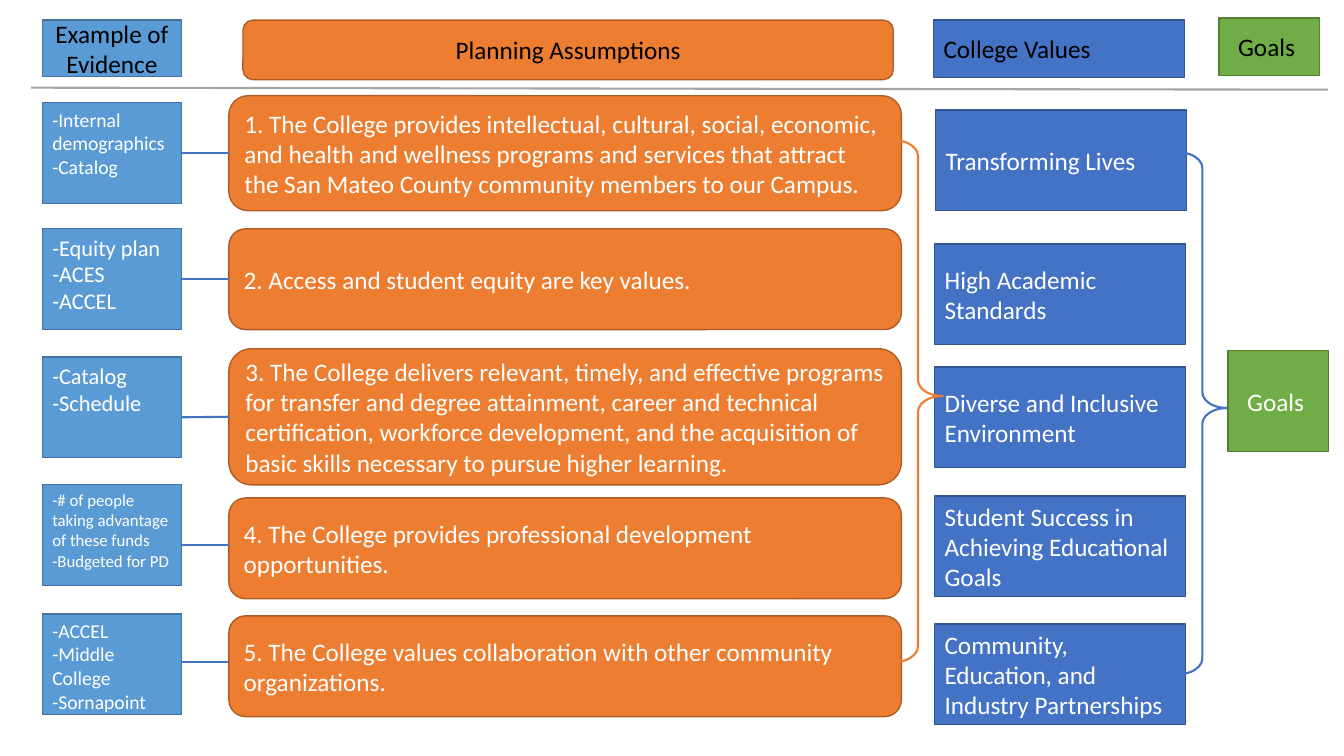
from dataclasses import dataclass

from lxml import etree
from pptx import Presentation
from pptx.dml.color import RGBColor
from pptx.enum.shapes import MSO_CONNECTOR, MSO_SHAPE
from pptx.enum.text import MSO_ANCHOR, PP_ALIGN
from pptx.oxml.ns import qn
from pptx.shapes.autoshape import Shape
from pptx.shapes.connector import Connector
from pptx.slide import Slide
from pptx.util import Inches, Pt

RECTANGLE = MSO_SHAPE.RECTANGLE
ROUNDED = MSO_SHAPE.ROUNDED_RECTANGLE
BRACE = MSO_SHAPE.RIGHT_BRACE
STRAIGHT = MSO_CONNECTOR.STRAIGHT
LEFT, CENTER = PP_ALIGN.LEFT, PP_ALIGN.CENTER
TOP, MIDDLE = MSO_ANCHOR.TOP, MSO_ANCHOR.MIDDLE
LEFT_SIDE, RIGHT_SIDE = 1, 3

FONT = "Calibri"
WHITE, BLACK, GRAY = "FFFFFF", "000000", "A5A5A5"
BLUE, ORANGE = "4472C4", "ED7D31"


@dataclass(frozen=True)
class Style:
    preset: MSO_SHAPE
    fill: str
    line: str
    align: PP_ALIGN = LEFT
    anchor: MSO_ANCHOR = MIDDLE


@dataclass(frozen=True)
class Card:
    text: str
    left: float
    top: float
    width: float
    height: float = 1
    size: int = 18


@dataclass(frozen=True)
class Row:
    evidence: Card
    assumption: Card
    link_y: float


@dataclass(frozen=True)
class Brace:
    left: float
    top: float
    color: str


EVIDENCE = Style(RECTANGLE, "5B9BD5", "43739E", anchor=TOP)
EVIDENCE_HEADER = Style(RECTANGLE, "5B9BD5", "43739E", align=CENTER)
ASSUMPTION = Style(ROUNDED, ORANGE, "AF5C24")
ASSUMPTION_HEADER = Style(ROUNDED, ORANGE, "AF5C24", align=CENTER)
VALUE = Style(RECTANGLE, BLUE, "325491")
GOAL = Style(RECTANGLE, "70AD47", "538035", align=CENTER)


def evidence(text: str, top: float, size: int) -> Card:
    return Card(text, 0.42, top, 1.38, size=size)


def assumption(text: str, top: float, height: float = 1) -> Card:
    return Card(text, 2.27, top, 6.67, height)


def value(text: str, top: float, left: float = 9.27) -> Card:
    return Card(text, left, top, 2.49)


ROWS = [
    Row(evidence("-Internal demographics\n-Catalog", 1.02, 14),
        assumption("1. The College provides intellectual, cultural, social, economic, "
                   "and health and wellness programs and services that attract the "
                   "San Mateo County community members to our Campus.", 0.95, 1.14), 1.52),
    Row(evidence("-Equity plan\n-ACES\n-ACCEL", 2.27, 16),
        assumption("2. Access and student equity are key values.", 2.27), 2.77),
    Row(evidence("-Catalog\n-Schedule", 3.54, 16),
        assumption("3. The College delivers relevant, timely, and effective programs for "
                   "transfer and degree attainment, career and technical certification, "
                   "workforce development, and the acquisition of basic skills necessary "
                   "to pursue higher learning.", 3.46, 1.35), 4.14),
    Row(evidence("-# of people taking advantage of these funds\n-Budgeted for PD", 4.81, 12),
        assumption("4. The College provides professional development opportunities.",
                   4.94), 5.41),
    Row(evidence("-ACCEL\n-Middle College\n-Sornapoint", 6.09, 14),
        assumption("5. The College values collaboration with other community "
                   "organizations.", 6.11), 6.57),
]
VALUES = [
    value("Transforming Lives", 1.09, 9.28),
    value("High Academic Standards", 2.42),
    value("Diverse and Inclusive Environment", 3.64),
    value("Student Success in Achieving Educational Goals", 4.92),
    value("Community, Education, and Industry Partnerships", 6.19),
]
HEADERS = [
    (Card("Example of Evidence", 0.42, 0.2, 1.38, 0.56), EVIDENCE_HEADER),
    (Card("Planning Assumptions", 2.41, 0.2, 6.45, 0.59), ASSUMPTION_HEADER),
    (Card("College Values", 9.26, 0.2, 2.49, 0.57), VALUE),
    (Card("Goals ", 12.09, 0.18, 1, 0.57), GOAL),
]
GOALS = Card("Goals ", 12.18, 3.48, 1)
BRACES = [Brace(8.86, 1.39, ORANGE), Brace(11.68, 1.51, BLUE)]


def rgb(color: str) -> RGBColor:
    return RGBColor.from_string(color)


def write_text(box: Shape, text: str, *, size: int, color: str,
               align: PP_ALIGN, anchor: MSO_ANCHOR) -> None:
    frame = box.text_frame
    frame.word_wrap = True
    frame.vertical_anchor = anchor
    frame.text = text
    for para in frame.paragraphs:
        para.alignment = align
        for span in para.runs:
            span.font.name = FONT
            span.font.size = Pt(size)
            span.font.color.rgb = rgb(color)


def add_card(page: Slide, card: Card, style: Style, color: str = WHITE) -> Shape:
    box = page.shapes.add_shape(style.preset, Inches(card.left), Inches(card.top),
                                Inches(card.width), Inches(card.height))
    box.shadow.inherit = False
    box.fill.solid()
    box.fill.fore_color.rgb = rgb(style.fill)
    box.line.color.rgb = rgb(style.line)
    box.line.width = Pt(1)
    write_text(box, card.text, size=card.size, color=color,
               align=style.align, anchor=style.anchor)
    return box


def add_line(page: Slide, start: tuple[float, float], end: tuple[float, float],
             color: str) -> Connector:
    line = page.shapes.add_connector(STRAIGHT, Inches(start[0]), Inches(start[1]),
                                     Inches(end[0]), Inches(end[1]))
    line.line.color.rgb = rgb(color)
    line.line.width = Pt(1.5)
    etree.SubElement(line._element.spPr, qn("a:effectLst"))
    return line


def is_middle(card: Card, y: float) -> bool:
    return abs(card.top + card.height / 2 - y) < 0.01


def add_row(page: Slide, row: Row) -> None:
    source, target = row.evidence, row.assumption
    source_box = add_card(page, source, EVIDENCE)
    target_box = add_card(page, target, ASSUMPTION)
    link = add_line(page, (source.left + source.width, row.link_y),
                    (target.left, row.link_y), BLUE)
    if is_middle(source, row.link_y):
        link.begin_connect(source_box, RIGHT_SIDE)
    if is_middle(target, row.link_y):
        link.end_connect(target_box, LEFT_SIDE)


def add_brace(page: Slide, brace: Brace) -> None:
    shape = page.shapes.add_shape(BRACE, Inches(brace.left), Inches(brace.top),
                                  Inches(0.49), Inches(5.18))
    shape.shadow.inherit = False
    shape.adjustments[0] = 0.32
    shape.adjustments[1] = 0.49
    shape.fill.background()
    shape.line.color.rgb = rgb(brace.color)
    shape.line.width = Pt(1.5)


def main() -> None:
    deck = Presentation()
    deck.slide_width, deck.slide_height = Inches(13.33), Inches(7.5)
    page = deck.slides.add_slide(deck.slide_layouts.get_by_name("Blank"))
    for card, style in HEADERS:
        add_card(page, card, style, BLACK)
    add_line(page, (0.31, 0.87), (13.17, 0.89), GRAY)
    for row in ROWS:
        add_row(page, row)
    for card in VALUES:
        add_card(page, card, VALUE)
    add_card(page, GOALS, GOAL)
    for brace in BRACES:
        add_brace(page, brace)
    deck.save("out.pptx")


if __name__ == "__main__":
    main()
